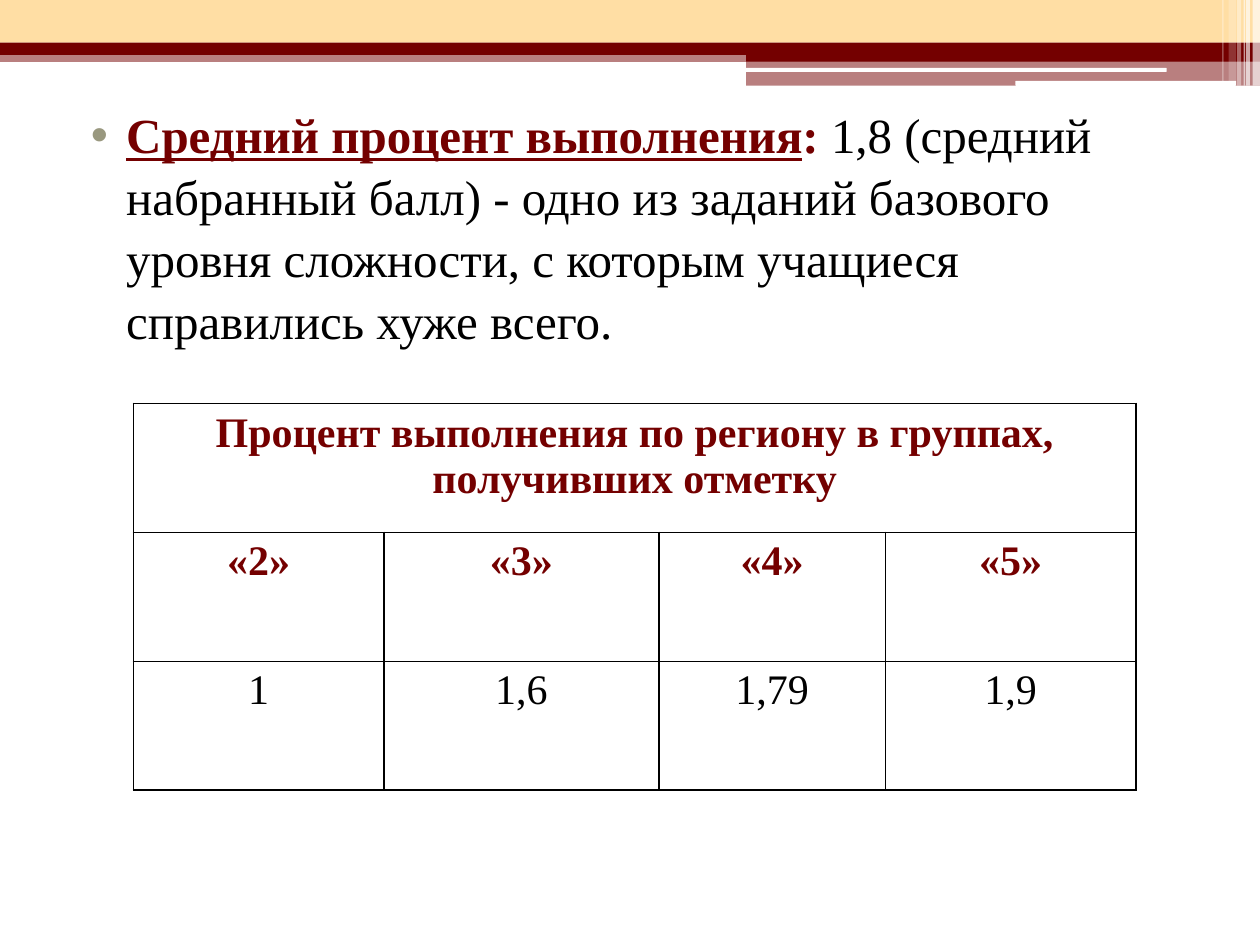
import dataclasses

import pptx
import pptx.dml.color
import pptx.enum.shapes
import pptx.enum.text
import pptx.oxml
import pptx.oxml.ns
import pptx.oxml.xmlchemy
import pptx.util

Cm = pptx.util.Cm
Pt = pptx.util.Pt
RGBColor = pptx.dml.color.RGBColor
Geometry = pptx.enum.shapes.MSO_SHAPE

MAROON = RGBColor(0x74, 0x00, 0x00)
CREAM = RGBColor(0xFF, 0xDE, 0xA4)
WHITE = RGBColor(0xFF, 0xFF, 0xFF)
BLACK = RGBColor(0x00, 0x00, 0x00)
BULLET_GREY = RGBColor(0x99, 0x98, 0x7F)

FONT = "Times New Roman"
SLIDE_WIDTH, SLIDE_HEIGHT = 25.4, 19.05


@dataclasses.dataclass(frozen=True)
class Band:
    """A plain bar of the header; lengths in centimetres, opacity in percent."""

    left: float
    top: float
    width: float
    height: float
    color: RGBColor
    opacity: int = 100
    geometry: Geometry = Geometry.RECTANGLE


RIGHT_LEFT, RIGHT_WIDTH = 15.04, 10.36
HEADER_BANDS = [
    Band(0, 1.02, SLIDE_WIDTH, 0.23, MAROON, 50),
    Band(0, 0, SLIDE_WIDTH, 0.86, CREAM),
    Band(0, 0.86, SLIDE_WIDTH, 0.25, MAROON),
    Band(RIGHT_LEFT, 0.99, RIGHT_WIDTH, 0.25, MAROON),
    Band(RIGHT_LEFT, 1.22, RIGHT_WIDTH, 0.51, MAROON, 50),
    Band(15.01, 1.37, 8.51, 0.08, WHITE, geometry=Geometry.ROUNDED_RECTANGLE),
    Band(20.47, 1.63, 4.45, 0.1, WHITE, geometry=Geometry.ROUNDED_RECTANGLE),
    Band(25.25, 0, 0.15, 1.73, WHITE, 65),
    Band(25.12, 0, 0.08, 1.73, WHITE, 65),
    Band(25.07, 0, 0.03, 1.73, WHITE, 60),
    Band(24.94, 0, 0.08, 1.73, WHITE, 40),
    Band(24.77, 0, 0.15, 1.63, WHITE, 20),
    Band(24.64, 0, 0.03, 1.63, WHITE, 30),
]

TABLE_HEADING = "Процент выполнения по региону в группах, получивших отметку"
GRADES = ["«2»", "«3»", "«4»", "«5»"]
SCORES = ["1", "1,6", "1,79", "1,9"]
COLUMN_WIDTHS = [5.05, 5.54, 4.57, 5.05]
ROW_HEIGHT = 2.6


def add_child(parent, tag: str, **attributes: str):
    child = pptx.oxml.xmlchemy.OxmlElement(tag)
    for name, value in attributes.items():
        child.set(name, value)
    parent.append(child)
    return child


def add_band(slide, band: Band) -> None:
    shape = slide.shapes.add_shape(
        band.geometry, Cm(band.left), Cm(band.top), Cm(band.width), Cm(band.height)
    )
    shape.shadow.inherit = False
    shape.line.fill.background()
    shape.fill.solid()
    shape.fill.fore_color.rgb = band.color
    if band.opacity < 100:
        color = shape.fill._xPr.find(".//" + pptx.oxml.ns.qn("a:srgbClr"))
        add_child(color, "a:alpha", val=str(band.opacity * 1000))


def add_text(paragraph, text: str, *, size: float, color: RGBColor = BLACK,
             bold: bool = False, underline: bool = False) -> None:
    run = paragraph.add_run()
    run.text = text
    run.font.name = FONT
    run.font.size = Pt(size)
    run.font.bold = bold
    run.font.underline = underline
    run.font.color.rgb = color


def set_bullet(paragraph, character: str, color: RGBColor) -> None:
    properties = paragraph._p.get_or_add_pPr()
    properties.set("marL", str(Cm(1.02)))
    properties.set("indent", str(Cm(-0.71)))
    bullet_color = add_child(properties, "a:buClr")
    add_child(bullet_color, "a:srgbClr", val=str(color))
    add_child(properties, "a:buChar", char=character)


def fill_body(body) -> None:
    body.left, body.top = Cm(1.27), Cm(1.93)
    body.width, body.height = Cm(22.86), Cm(16.33)
    paragraph = body.text_frame.paragraphs[0]
    paragraph.space_before = Pt(3)
    paragraph.line_spacing = 1.05
    set_bullet(paragraph, "•", BULLET_GREY)
    add_text(paragraph, "Средний процент выполнения", size=28, color=MAROON,
             bold=True, underline=True)
    add_text(paragraph, ": ", size=28, color=MAROON, bold=True)
    add_text(paragraph, "1,8 (средний набранный балл) - одно из заданий базового "
             "уровня сложности, с которым учащиеся справились хуже всего.", size=28)


def set_borders(cell, color: RGBColor, width: float) -> None:
    properties = cell._tc.get_or_add_tcPr()
    for side in ("L", "R", "T", "B"):
        line = add_child(properties, f"a:ln{side}", w=str(Pt(width)))
        fill = add_child(line, "a:solidFill")
        add_child(fill, "a:srgbClr", val=str(color))


def fill_cell(cell, text: str, **text_format) -> None:
    paragraph = cell.text_frame.paragraphs[0]
    paragraph.alignment = pptx.enum.text.PP_ALIGN.CENTER
    add_text(paragraph, text, size=24, **text_format)


def add_results_table(slide) -> None:
    row_count, column_count = 3, len(COLUMN_WIDTHS)
    table = slide.shapes.add_table(
        row_count, column_count, Cm(2.69), Cm(8.13),
        Cm(sum(COLUMN_WIDTHS)), Cm(ROW_HEIGHT * row_count),
    ).table
    table.first_row = table.horz_banding = False
    for column, width in zip(table.columns, COLUMN_WIDTHS):
        column.width = Cm(width)
    for row in table.rows:
        row.height = Cm(ROW_HEIGHT)
    for cell in table.iter_cells():
        set_borders(cell, BLACK, 1)
        cell.fill.background()
    table.cell(0, 0).merge(table.cell(0, column_count - 1))
    fill_cell(table.cell(0, 0), TABLE_HEADING, color=MAROON, bold=True)
    for index, (grade, score) in enumerate(zip(GRADES, SCORES)):
        fill_cell(table.cell(1, index), grade, color=MAROON, bold=True)
        fill_cell(table.cell(2, index), score)


def main() -> None:
    presentation = pptx.Presentation()
    presentation.slide_width = Cm(SLIDE_WIDTH)
    presentation.slide_height = Cm(SLIDE_HEIGHT)
    slide = presentation.slides.add_slide(presentation.slide_layouts[1])
    title = slide.shapes.title
    title._element.getparent().remove(title._element)
    for band in HEADER_BANDS:
        add_band(slide, band)
    fill_body(slide.placeholders[1])
    add_results_table(slide)
    presentation.save("out.pptx")


if __name__ == "__main__":
    main()
